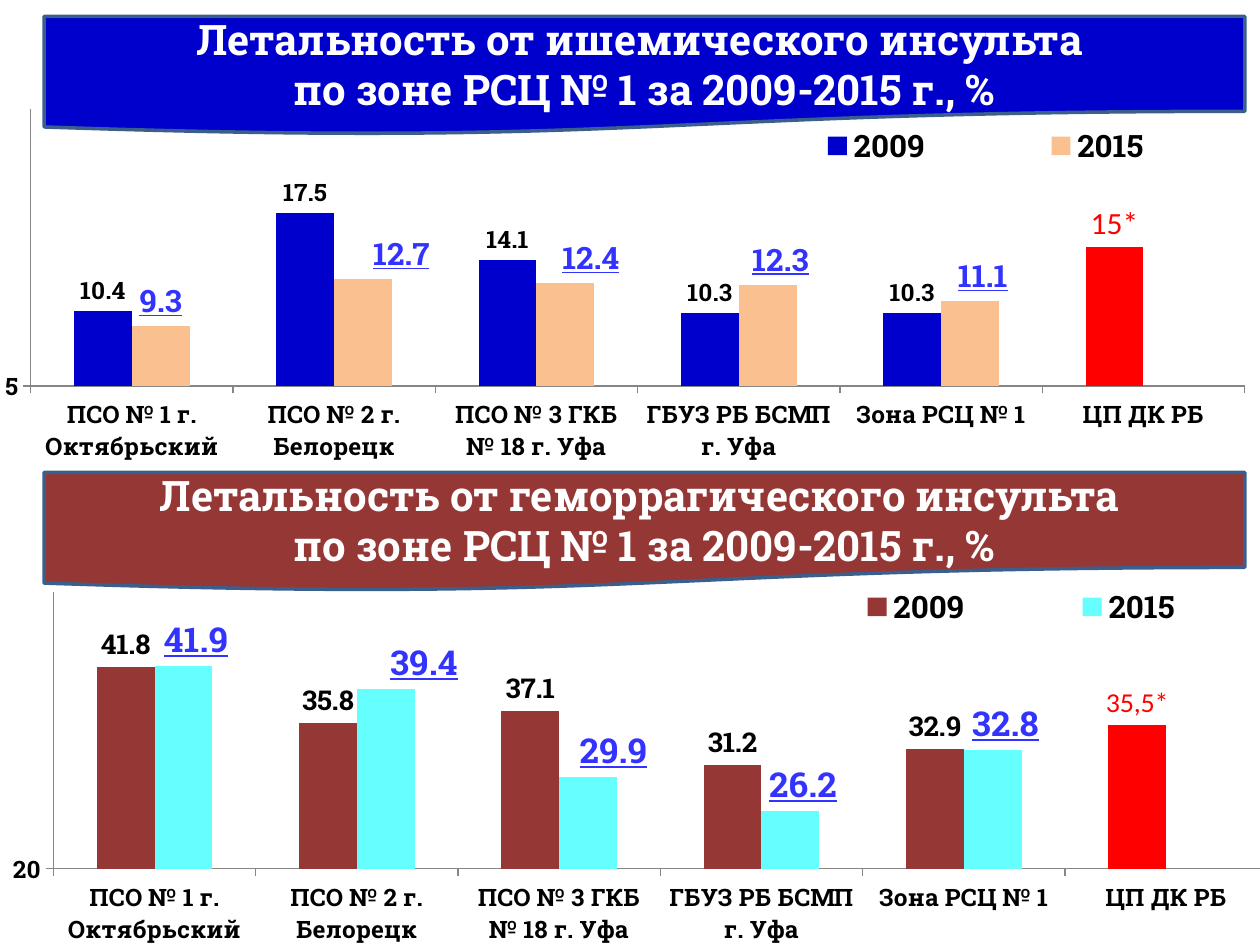
from dataclasses import dataclass

from lxml.etree import SubElement
from pptx import Presentation
from pptx.chart.chart import Chart
from pptx.chart.data import CategoryChartData
from pptx.dml.color import RGBColor
from pptx.enum.chart import XL_CHART_TYPE, XL_LABEL_POSITION, XL_LEGEND_POSITION, XL_TICK_MARK
from pptx.enum.shapes import MSO_SHAPE
from pptx.enum.text import MSO_ANCHOR, PP_ALIGN
from pptx.oxml import parse_xml
from pptx.oxml.ns import nsdecls, qn
from pptx.slide import Slide
from pptx.util import Inches, Pt


@dataclass(frozen=True)
class Theme:
    heading_font: str = "Roboto Slab"
    body_font: str = "Calibri"
    white: str = "FFFFFF"
    black: str = "000000"
    red: str = "FF0000"
    accent: str = "3333FF"
    axis: str = "868686"
    banner_line: str = "3A5F8C"
    title_size: int = 24
    legend_size: int = 18
    axis_size: int = 14


@dataclass(frozen=True)
class Panel:
    """One banner with the column chart below it."""
    heading: str
    banner_top: float
    chart_left: float
    chart_top: float
    values_2009: tuple
    values_2015: tuple
    color_2009: str
    color_2015: str
    axis_range: tuple
    major_unit: int
    label_sizes: tuple
    reference_label: str
    reference_size: int
    legend_box: tuple
    label_shifts: tuple


THEME = Theme()
CATEGORIES = ("ПСО № 1 г. Октябрьский", "ПСО № 2 г. Белорецк", "ПСО № 3 ГКБ № 18 г. Уфа",
              "ГБУЗ РБ БСМП г. Уфа", "Зона РСЦ № 1", "ЦП ДК РБ")
REFERENCE = len(CATEGORIES) - 1
PLOT_BOX = (0.036, 0.037, 0.952, 0.773)

PANELS = (
    Panel("Летальность от ишемического инсульта ", 0.13, -0.12, 0.76,
          (10.4, 17.5, 14.1, 10.3, 10.3, 15), (9.3, 12.7, 12.4, 12.3, 11.1, None),
          "0000CC", "FAC090", (5, 25), 30, (14, 18), "15*", 18,
          (0.57, 0.08, 0.43, 0.12), (0, 0.03, 0.02, 0.01, 0.01)),
    Panel("Летальность от геморрагического инсульта ", 3.75, 0.06, 4.59,
          (41.8, 35.8, 37.1, 31.2, 32.9, 35.5), (41.9, 39.4, 29.9, 26.2, 32.8, None),
          "953735", "66FFFF", (20, 50), 130, (16, 20), "35,5*", 16,
          (0.59, 0.02, 0.41, 0.12), (0.01, 0.03, 0.02, 0.01, 0.01)),
)


def style_font(font, size: int, color: str, bold: bool = True,
               name: str = THEME.heading_font) -> None:
    font.size = Pt(size)
    font.bold = bold
    font.name = name
    font.color.rgb = RGBColor.from_string(color)


def paint(fill, color: str) -> None:
    fill.solid()
    fill.fore_color.rgb = RGBColor.from_string(color)


def make_layout(**settings):
    """Manual chart layout; settings keep the order of the schema."""
    layout = parse_xml(f"<c:layout {nsdecls('c')}><c:manualLayout/></c:layout>")
    for tag, value in settings.items():
        SubElement(layout[0], qn(f"c:{tag}")).set("val", str(value))
    return layout


def place_part(part, box: tuple, inner: bool = False) -> None:
    for old in part.findall(qn("c:layout")):
        part.remove(old)
    target = {"layoutTarget": "inner"} if inner else {}
    layout = make_layout(**target, xMode="edge", yMode="edge",
                         **dict(zip(("x", "y", "w", "h"), box)))
    if inner:
        part.insert(0, layout)
    else:
        part.find(qn("c:legendPos")).addnext(layout)


def style_axes(chart: Chart, panel: Panel) -> None:
    for axis in (chart.category_axis, chart.value_axis):
        style_font(axis.tick_labels.font, THEME.axis_size, THEME.black)
        axis.major_tick_mark = XL_TICK_MARK.OUTSIDE
        axis.format.line.color.rgb = RGBColor.from_string(THEME.axis)
    axis = chart.value_axis
    axis.minimum_scale, axis.maximum_scale = panel.axis_range
    axis.major_unit = panel.major_unit
    axis.major_gridlines.format.line.color.rgb = RGBColor.from_string(THEME.axis)


def style_series(chart: Chart, panel: Panel) -> None:
    colors = (panel.color_2009, panel.color_2015)
    label_colors = (THEME.black, THEME.accent)
    for series, color, size, label_color in zip(
            chart.plots[0].series, colors, panel.label_sizes, label_colors):
        paint(series.format.fill, color)
        labels = series.data_labels
        labels.show_value = True
        labels.position = XL_LABEL_POSITION.OUTSIDE_END
        style_font(labels.font, size, label_color)

    # The last column is a red reference value with its own label
    before, after = chart.plots[0].series
    point = before.points[REFERENCE]
    paint(point.format.fill, THEME.red)
    frame = point.data_label.text_frame
    frame.text = panel.reference_label
    style_font(frame.paragraphs[0].runs[0].font, panel.reference_size, THEME.red,
               False, THEME.body_font)
    point.data_label.position = XL_LABEL_POSITION.OUTSIDE_END

    # The 2015 labels are underlined and moved to the right of the 2009 labels
    after.data_labels.font.underline = True
    for index, shift in enumerate(panel.label_shifts):
        if shift:
            label = after.points[index].data_label
            style_font(label.font, panel.label_sizes[1], THEME.accent)
            label.font.underline = True
            label.position = XL_LABEL_POSITION.OUTSIDE_END
            marker = after._element.xpath(f".//c:dLbl/c:idx[@val='{index}']")[0]
            marker.addnext(make_layout(x=shift, y=0))


def add_column_chart(page: Slide, panel: Panel) -> None:
    data = CategoryChartData()
    data.categories = CATEGORIES
    data.add_series("2009", panel.values_2009)
    data.add_series("2015", panel.values_2015)
    chart = page.shapes.add_chart(
        XL_CHART_TYPE.COLUMN_CLUSTERED, Inches(panel.chart_left), Inches(panel.chart_top),
        Inches(10.12), Inches(2.91), data).chart
    style_font(chart.font, THEME.legend_size, THEME.black, False, THEME.body_font)
    chart.has_title = False
    chart.plots[0].gap_width = 150
    chart.plots[0].overlap = 0
    chart.plots[0].vary_by_categories = False
    chart.has_legend = True
    chart.legend.position = XL_LEGEND_POSITION.TOP
    chart.legend.include_in_layout = False
    style_font(chart.legend.font, THEME.legend_size, THEME.black)
    style_axes(chart, panel)
    style_series(chart, panel)
    place_part(chart._chartSpace.chart.plotArea, PLOT_BOX, inner=True)
    place_part(chart.legend._element, panel.legend_box)


def add_banner(page: Slide, panel: Panel) -> None:
    box = page.shapes.add_shape(MSO_SHAPE.FLOWCHART_DOCUMENT, Inches(0.35),
                                Inches(panel.banner_top), Inches(9.53), Inches(0.94))
    box.shadow.inherit = False
    paint(box.fill, panel.color_2009)
    box.line.color.rgb = RGBColor.from_string(THEME.banner_line)
    box.line.width = Pt(2)
    frame = box.text_frame
    frame.vertical_anchor = MSO_ANCHOR.MIDDLE
    frame.text = f"{panel.heading}\nпо зоне РСЦ № 1 за 2009-2015 г., %"
    for para in frame.paragraphs:
        para.alignment = PP_ALIGN.CENTER
        style_font(para.runs[0].font, THEME.title_size, THEME.white)


def main() -> None:
    deck = Presentation()
    deck.slide_width, deck.slide_height = Inches(10), Inches(7.5)
    page = deck.slides.add_slide(deck.slide_layouts[6])
    for panel in PANELS:
        add_column_chart(page, panel)
        add_banner(page, panel)
    deck.save("out.pptx")


if __name__ == "__main__":
    main()
